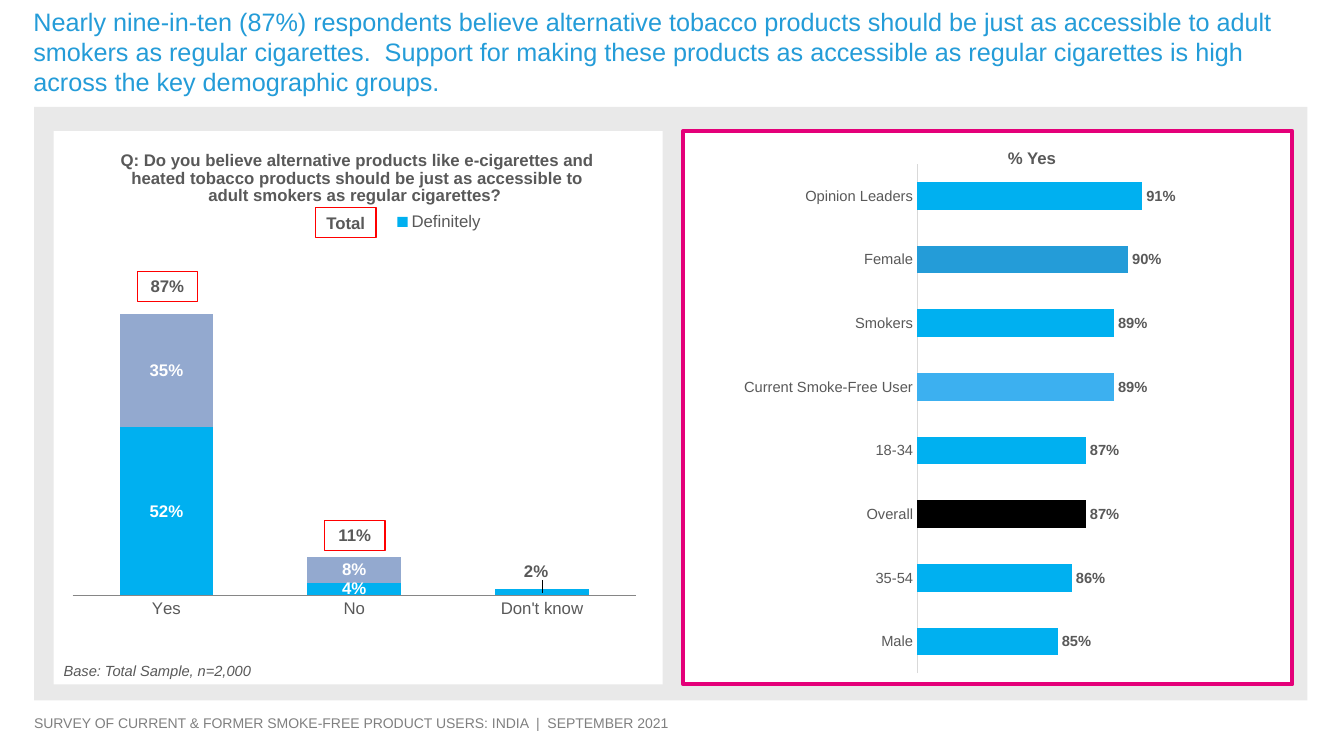
from pptx import Presentation, oxml, util as u
from pptx.chart import data
from pptx.dml import color
from pptx.enum import chart as charts, shapes, text

COLORS = {
    "panel": "E9E9E9", "white": "FFFFFF", "body": "595959", "footer": "808080",
    "title": "249CD8", "bright": "00B0F0", "sky": "3CB0F0", "periwinkle": "93A9CF",
    "black": "000000", "pink": "E40079", "red": "FF0000", "axis": "868686", "rule": "D9D9D9",
}
NS = 'xmlns:c="http://schemas.openxmlformats.org/drawingml/2006/chart"'
NS_A = 'xmlns:a="http://schemas.openxmlformats.org/drawingml/2006/main"'
FONT = "Arial"


def rgb(name):
    return color.RGBColor.from_string(COLORS[name])


def manual_layout(**settings):
    """Build a chart layout from settings in schema order."""
    items = "".join(f'<c:{key} val="{value}"/>' for key, value in settings.items())
    return oxml.parse_xml(f"<c:layout {NS}><c:manualLayout>{items}</c:manualLayout></c:layout>")


class SlideBuilder:
    """Places elements by percent of the slide: left, top, width, height."""

    def __init__(self, presentation):
        self.width = presentation.slide_width
        self.height = presentation.slide_height
        self.slide = presentation.slides.add_slide(presentation.slide_layouts[5])

    def box(self, left, top, width, height):
        return (u.Emu(int(self.width * left / 100)), u.Emu(int(self.height * top / 100)),
                u.Emu(int(self.width * width / 100)), u.Emu(int(self.height * height / 100)))

    def style(self, font, size, tone="body", bold=False, italic=False):
        font.name, font.size = FONT, u.Pt(size)
        font.bold, font.italic = bold, italic
        font.color.rgb = rgb(tone)

    def set_text(self, shape, words, size, tone="body", align=text.PP_ALIGN.LEFT, wrap=True,
                 anchor=text.MSO_ANCHOR.TOP, **emphasis):
        frame = shape.text_frame
        frame.text = words
        frame.word_wrap = wrap
        frame.auto_size = text.MSO_AUTO_SIZE.NONE
        frame.vertical_anchor = anchor
        paragraph = frame.paragraphs[0]
        paragraph.alignment = align
        self.style(paragraph.font, size, tone, **emphasis)

    def title(self, place, words):
        shape = self.slide.shapes.title
        shape.left, shape.top, shape.width, shape.height = self.box(*place)
        self.set_text(shape, words, 18, "title")

    def label(self, place, words, size, tone="body", **emphasis):
        shape = self.slide.shapes.add_textbox(*self.box(*place))
        self.set_text(shape, words, size, tone, **emphasis)

    def rectangle(self, place, fill=None, line=None, weight=0.75):
        shape = self.slide.shapes.add_shape(shapes.MSO_SHAPE.RECTANGLE, *self.box(*place))
        shape.shadow.inherit = False
        if fill:
            shape.fill.solid()
            shape.fill.fore_color.rgb = rgb(fill)
        else:
            shape.fill.background()
        if line:
            shape.line.color.rgb = rgb(line)
            shape.line.width = u.Pt(weight)
        else:
            shape.line.fill.background()
        return shape

    def badge(self, left, top, words):
        shape = self.rectangle((left, top, 4.5, 4), line="red")
        self.set_text(shape, words, 12, align=text.PP_ALIGN.CENTER, wrap=False,
                      anchor=text.MSO_ANCHOR.MIDDLE, bold=True)

    def chart(self, place, kind, categories, series, plot_area, gap, low, axis_size, axis_line):
        """Add a bar chart; series holds (name, values, fill, label tone, label size, position)."""
        chart_data = data.CategoryChartData(number_format="0%")
        chart_data.categories = categories
        for name, values, *_ in series:
            chart_data.add_series(name, values)
        chart = self.slide.shapes.add_chart(kind, *self.box(*place), chart_data).chart
        chart.has_title = chart.has_legend = False
        self.style(chart.font, axis_size)

        # Transparent background and fixed plot area
        space = chart._chartSpace
        space.find("{*}txPr").addprevious(
            oxml.parse_xml(f"<c:spPr {NS} {NS_A}><a:noFill/><a:ln><a:noFill/></a:ln></c:spPr>"))
        area = space.find(".//{*}plotArea")
        for old in area.findall("{*}layout"):
            area.remove(old)
        x, y, w, h = plot_area
        area.insert(0, manual_layout(layoutTarget="inner", xMode="edge", yMode="edge",
                                     x=x, y=y, w=w, h=h))

        # Axes
        values_axis, category_axis = chart.value_axis, chart.category_axis
        values_axis.minimum_scale, values_axis.maximum_scale = low, 1
        values_axis.has_major_gridlines = False
        values_axis.visible = False
        category_axis.major_tick_mark = charts.XL_TICK_MARK.NONE
        category_axis.format.line.color.rgb = rgb(axis_line)
        category_axis.format.line.width = u.Pt(0.75)
        self.style(category_axis.tick_labels.font, axis_size)

        # Bars and value labels
        plot = chart.plots[0]
        plot.gap_width = gap
        plot.vary_by_categories = False
        for bars, (_, _, fill, tone, size, position) in zip(plot.series, series):
            bars.format.fill.solid()
            bars.format.fill.fore_color.rgb = rgb(fill)
            labels = bars.data_labels
            labels.show_value = True
            labels.number_format, labels.number_format_is_linked = "0%", False
            labels.position = position
            self.style(labels.font, size, tone, bold=True)
        return chart


def add_answer_chart(builder):
    center = charts.XL_LABEL_POSITION.CENTER
    chart = builder.chart(
        (4.05, 17.33, 45.08, 66.8), charts.XL_CHART_TYPE.COLUMN_STACKED,
        ["Yes", "No", "Don't know"],
        [("Definitely", (0.52, 0.04, 0.02), "bright", "white", 12, center),
         ("Series 2", (0.35, 0.08, None), "periwinkle", "white", 12, center)],
        (0.03, 0.28, 0.93, 0.64), 100, 0, 12, "axis")
    chart.plots[0].overlap = 100

    # Question
    frame = chart.chart_title.text_frame
    frame.text = ("Q: Do you believe alternative products like e-cigarettes and heated tobacco "
                  "products should be just as accessible to adult smokers as regular cigarettes? ")
    builder.style(frame.paragraphs[0].font, 12, bold=True)

    # Legend with the first series only
    chart.has_legend = True
    legend = chart.legend
    legend.position = charts.XL_LEGEND_POSITION.TOP
    legend.include_in_layout = False
    builder.style(legend.font, 12)
    element = chart._chartSpace.find(".//{*}legend")
    for old in element.findall("{*}layout"):
        element.remove(old)
    position = element.find("{*}legendPos")
    position.addnext(manual_layout(xMode="edge", yMode="edge", x=0.55, y=0.15, w=0.17, h=0.06))
    position.addnext(oxml.parse_xml(
        f'<c:legendEntry {NS}><c:idx val="1"/><c:delete val="1"/></c:legendEntry>'))

    # The short last bar has its label above it
    label = chart.plots[0].series[0].points[2].data_label
    builder.style(label.font, 12, bold=True)
    label.position = center
    index = chart._chartSpace.find(".//{*}dLbl/{*}idx")
    index.addnext(manual_layout(x=-0.01, y=-0.04))


def add_group_chart(builder):
    groups = {"Male": 0.85, "35-54": 0.86, "Overall": 0.87, "18-34": 0.87,
              "Current Smoke-Free User": 0.89, "Smokers": 0.89, "Female": 0.9,
              "Opinion Leaders": 0.91}
    chart = builder.chart(
        (51.08, 17.33, 45.15, 73.2), charts.XL_CHART_TYPE.BAR_CLUSTERED, list(groups),
        [("Series 1", groups.values(), "bright", "body", 10.5,
          charts.XL_LABEL_POSITION.OUTSIDE_END)],
        (0.38, 0.06, 0.58, 0.92), 130, 0.75, 10.5, "rule")
    highlights = {"Overall": "black", "Current Smoke-Free User": "sky", "Female": "title"}
    for group, tone in highlights.items():
        fill = chart.plots[0].series[0].points[list(groups).index(group)].format.fill
        fill.solid()
        fill.fore_color.rgb = rgb(tone)


def main():
    presentation = Presentation()
    presentation.slide_width, presentation.slide_height = u.Inches(13.33), u.Inches(7.5)
    builder = SlideBuilder(presentation)

    # Frame, title and footer
    builder.rectangle((2.55, 14.13, 94.73, 78.53), "panel")
    builder.title((1.73, 0.13, 95.78, 13.47),
                  "Nearly nine-in-ten (87%) respondents believe alternative tobacco products should "
                  "be just as accessible to adult smokers as regular cigarettes.  Support for making "
                  "these products as accessible as regular cigarettes is high across the key "
                  "demographic groups.")
    builder.label((1.8, 93.87, 93.23, 3.6),
                  "SURVEY OF CURRENT & FORMER SMOKE-FREE PRODUCT USERS: INDIA  |  SEPTEMBER 2021",
                  10, "footer")

    # Answers of the total sample
    builder.rectangle((4, 17.33, 45.3, 73.2), "white")
    builder.label((4, 86.93, 34.88, 3.87), "Base: Total Sample, n=2,000", 10.5, italic=True)
    add_answer_chart(builder)
    for left, top, words in ((10.2, 35.87, "87%"), (24.15, 68.8, "11%"), (23.48, 27.47, "Total")):
        builder.badge(left, top, words)

    # Share of yes by group
    builder.rectangle((50.85, 17.33, 45.3, 73.2), "white", "pink", 3)
    add_group_chart(builder)
    builder.label((74.25, 18.93, 7.88, 4), "% Yes", 12, bold=True)

    presentation.save("out.pptx")


if __name__ == "__main__":
    main()
